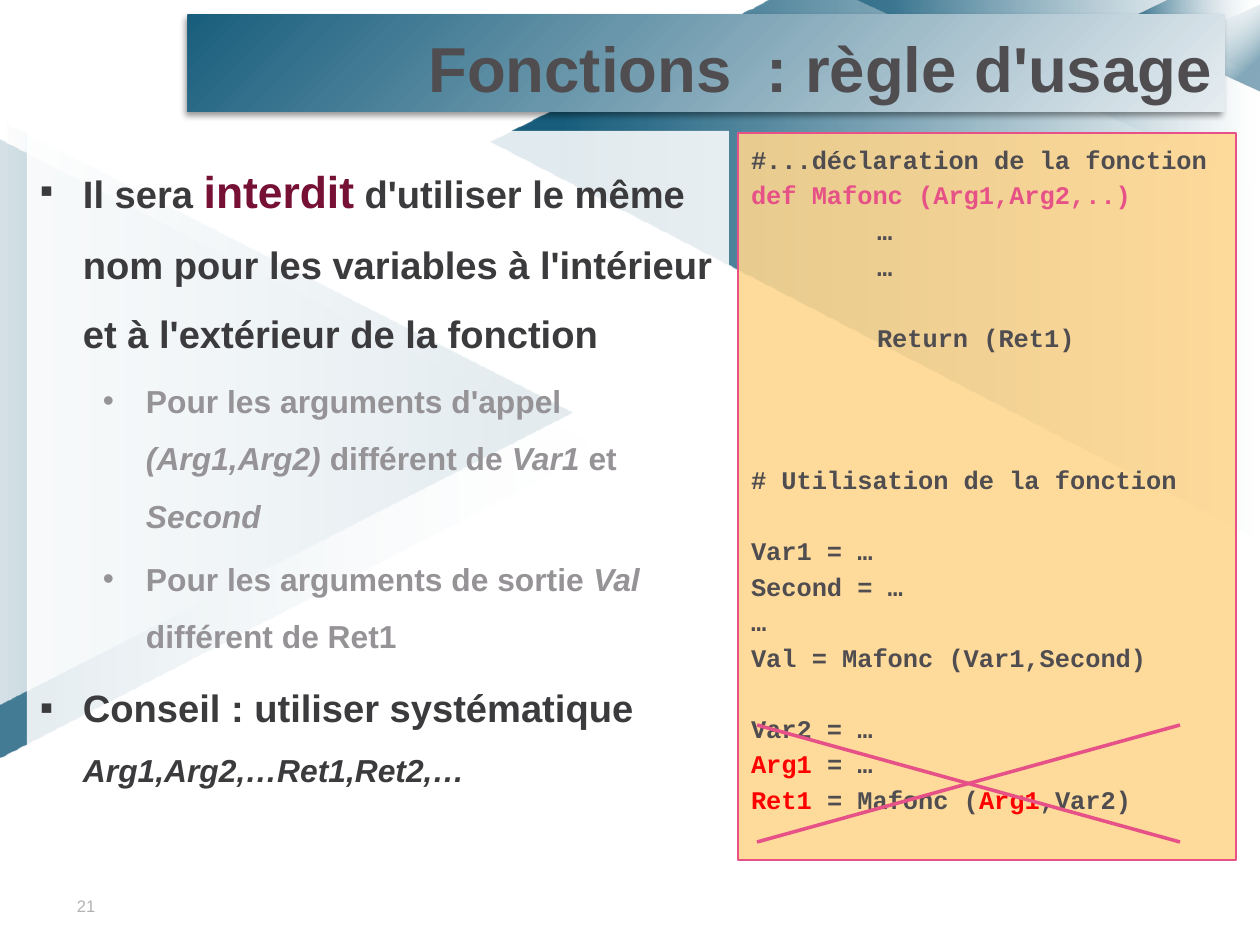
from dataclasses import dataclass

from lxml import etree
from pptx import Presentation
from pptx.dml.color import RGBColor
from pptx.enum.shapes import MSO_CONNECTOR, MSO_SHAPE
from pptx.enum.text import MSO_ANCHOR, PP_ALIGN
from pptx.oxml.ns import qn
from pptx.util import Pt

PX = 8000  # EMU per px
LINE = MSO_CONNECTOR.STRAIGHT
RECT, TRI = MSO_SHAPE.RECTANGLE, MSO_SHAPE.ISOSCELES_TRIANGLE
TOP, MID = MSO_ANCHOR.TOP, MSO_ANCHOR.MIDDLE
LEFT, RIGHT = PP_ALIGN.LEFT, PP_ALIGN.RIGHT

WHITE = RGBColor(0xFF, 0xFF, 0xFF)
BLUE = RGBColor(0x00, 0x4D, 0x6F)
TEAL = RGBColor(0x19, 0x5E, 0x7D)
PALE = RGBColor(0xE6, 0xED, 0xF1)
SAND = RGBColor(0xFF, 0xD6, 0x8D)
PINK = RGBColor(0xE6, 0x52, 0x87)
RED = RGBColor(0xFF, 0x00, 0x00)
WINE = RGBColor(0x76, 0x11, 0x35)
INK = RGBColor(0x3B, 0x3A, 0x3C)
SLATE = RGBColor(0x4F, 0x4D, 0x50)
GREY = RGBColor(0x96, 0x93, 0x97)
SILVER = RGBColor(0xB2, 0xB2, 0xB2)


@dataclass
class Run:
    text: str
    color: RGBColor
    size: float
    font: str = "Arial"
    bold: bool = True
    italic: bool = False


@dataclass
class Para:
    runs: list[Run]
    gap: float = 0  # points before
    lead: float | None = None  # line pitch in points
    left: int = 0
    hang: int = 0
    level: int = 0
    bullet: str = ""


@dataclass
class Fade:
    start: tuple[int, RGBColor, int]  # position, colour, opacity in percent
    end: tuple[int, RGBColor, int]
    angle: int = 0  # clockwise


@dataclass
class Facet:
    fade: Fade
    box: tuple[int, int, int, int] | None = None  # triangle
    turn: int = 0
    points: tuple[tuple[int, int], ...] = ()  # free outline


def blend(shape, fade: Fade) -> None:
    fill = shape.fill
    fill.gradient()
    fill.gradient_angle = (360 - fade.angle) % 360
    for stop, (pos, color, alpha) in zip(fill.gradient_stops, (fade.start, fade.end)):
        stop.position = pos / 100
        stop.color.rgb = color
    fills = shape._element.spPr.iter(qn("a:srgbClr"))
    for node, (_, _, alpha) in zip(list(fills), (fade.start, fade.end)):
        veil(node, alpha)


def veil(node, alpha: int) -> None:
    etree.SubElement(node, qn("a:alpha"), val=str(alpha * 1000))


def draw(shapes, kind, box: tuple[int, int, int, int], turn: int = 0):
    shape = shapes.add_shape(kind, *(n * PX for n in box))
    shape.rotation = turn
    shape.shadow.inherit = False
    shape.line.fill.background()
    return shape


def panel(shapes, box: tuple[int, int, int, int], color: RGBColor):
    shape = draw(shapes, RECT, box)
    shape.fill.solid()
    shape.fill.fore_color.rgb = color
    veil(next(shape._element.spPr.iter(qn("a:srgbClr"))), 87)
    return shape


def facet(shapes, item: Facet) -> None:
    if item.box:
        shape = draw(shapes, TRI, item.box, item.turn)
    else:
        pen = shapes.build_freeform(*item.points[0], scale=PX)
        pen.add_line_segments(item.points[1:], close=True)
        shape = pen.convert_to_shape()
        shape.shadow.inherit = False
        shape.line.fill.background()
    blend(shape, item.fade)


def write(shape, paras: list[Para], top: int = 7, align=LEFT, anchor=TOP) -> None:
    frame = shape.text_frame
    frame.word_wrap = True
    frame.vertical_anchor = anchor
    frame.margin_left = frame.margin_right = 13 * PX
    frame.margin_top, frame.margin_bottom = top * PX, 7 * PX
    for i, item in enumerate(paras):
        para = frame.paragraphs[0] if i == 0 else frame.add_paragraph()
        para.alignment, para.level = align, item.level
        props = para._p.get_or_add_pPr()
        props.set("marL", str(item.left * PX))
        props.set("indent", str(-item.hang * PX))
        if item.bullet:
            etree.SubElement(props, qn("a:buFont"), typeface="Arial")
            etree.SubElement(props, qn("a:buChar"), char=item.bullet)
        para.space_before = Pt(item.gap)
        if item.lead:
            para.line_spacing = Pt(item.lead)
        for part in item.runs:
            run = para.add_run()
            run.text = part.text
            font = run.font
            font.name, font.size = part.font, Pt(part.size)
            font.bold, font.italic = part.bold, part.italic
            font.color.rgb = part.color


def main_point(runs: list[Run], gap: float, lead: float) -> Para:
    return Para(runs, gap, lead, 43, 43, 0, "▪")


def sub_point(*parts: str) -> Para:
    """Every second part is in italics."""
    runs = [Run(t, GREY, 20, italic=i % 2 == 1) for i, t in enumerate(parts)]
    return Para(runs, 3.5, 36.2, 106, 43, 1, "•")


def code(*parts: tuple[str, RGBColor], skip: int = 0, left: int = 0) -> Para:
    runs = [Run(t, c, 16, "Courier New") for t, c in parts]
    return Para(runs, skip * 22.4, 22.4, left)


FACETS = [
    Facet(Fade((1, WHITE, 20), (91, BLUE, 73), 90), (-9, 149, 618, 600), 90),
    Facet(Fade((1, WHITE, 77), (91, BLUE, 83), 270), (-7, 126, 585, 573), 90),
    Facet(Fade((1, WHITE, 100), (91, BLUE, 90), 180),
          points=((1260, 540), (491, 142), (770, 0), (1260, 0))),
    Facet(Fade((1, WHITE, 0), (91, BLUE, 53), 180),
          points=((1260, 185), (856, 0), (1260, 0))),
    Facet(Fade((1, WHITE, 0), (91, BLUE, 63), 180),
          points=((1260, 75), (1134, 17), (1170, 0), (1260, 0))),
    Facet(Fade((27, WHITE, 0), (81, BLUE, 48), 135), (1170, 1, 86, 94), 270),
]

RULES = [
    main_point([Run("Il sera ", INK, 24), Run("interdit", WINE, 28),
                Run(" d'utiliser le même nom pour les variables à l'intérieur "
                    "et à l'extérieur de la fonction", INK, 24)], 0, 43.8),
    sub_point("Pour les arguments d'appel ", "(Arg1,Arg2) ", "différent de ",
              "Var1 ", "et", " Second"),
    sub_point("Pour les arguments de sortie ", "Val", " différent de Ret1"),
    main_point([Run("Conseil : utiliser systématique ", INK, 24),
                Run("Arg1,Arg2,…Ret1,Ret2,…", INK, 20, italic=True)], 10, 37.3),
]

CODE = [
    code(("#...déclaration de la fonction", SLATE)),
    code(("def Mafonc (Arg1,Arg2,..)", PINK)),
    code(("…", SLATE), left=126),
    code(("…", SLATE), left=126),
    code(("Return (Ret1)", SLATE), skip=1, left=126),
    code(("# Utilisation de la fonction", SLATE), skip=3),
    code(("Var1 = …", SLATE), skip=1),
    code(("Second = …", SLATE)),
    code(("…", SLATE)),
    code(("Val = Mafonc (Var1,Second)", SLATE)),
    code(("Var2 = …", SLATE), skip=1),
    code(("Arg1 ", RED), ("= …", SLATE)),
    code(("Ret1 ", RED), ("= Mafonc (", SLATE), ("Arg1", RED), (",Var2)", SLATE)),
]


def main() -> None:
    deck = Presentation()
    deck.slide_width, deck.slide_height = 1260 * PX, 945 * PX
    shapes = deck.slides.add_slide(deck.slide_layouts[6]).shapes

    # Backdrop and page number
    for item in FACETS:
        facet(shapes, item)
    page = shapes.add_textbox(*(n * PX for n in (64, 889, 59, 33)))
    write(page, [Para([Run("21", SILVER, 10.5, bold=False)])], anchor=MID)

    # Rules
    write(panel(shapes, (27, 131, 702, 727), WHITE), RULES, top=17)

    # Title bar, shaded from its top left corner
    bar = draw(shapes, RECT, (188, 15, 1037, 97))
    blend(bar, Fade((0, TEAL, 100), (100, PALE, 100)))
    props = bar._element.spPr
    lin = next(props.iter(qn("a:lin")))
    focus = etree.Element(qn("a:path"), {"path": "circle"})
    etree.SubElement(focus, qn("a:fillToRect"), r="100000", b="100000")
    lin.getparent().replace(lin, focus)
    shade = etree.SubElement(props.find(qn("a:effectLst")), qn("a:outerShdw"),
                             blurRad="50800", dist="38100", dir="8100000")
    veil(etree.SubElement(shade, qn("a:srgbClr"), val="000000"), 40)
    write(bar, [Para([Run("Fonctions  : règle d'usage", SLATE, 40)])], 14, RIGHT)

    # Code sample
    sample = panel(shapes, (738, 133, 498, 727), SAND)
    sample.line.color.rgb = PINK
    sample.line.width = Pt(0.75)
    write(sample, CODE, top=6)

    # Cross over the wrong call
    for start, end in ((725, 842), (842, 725)):
        stroke = shapes.add_connector(LINE, 757 * PX, start * PX, 1180 * PX, end * PX)
        stroke.line.color.rgb = PINK
        stroke.line.width = Pt(2.25)
        etree.SubElement(stroke._element.spPr, qn("a:effectLst"))

    deck.save("out.pptx")


if __name__ == "__main__":
    main()
